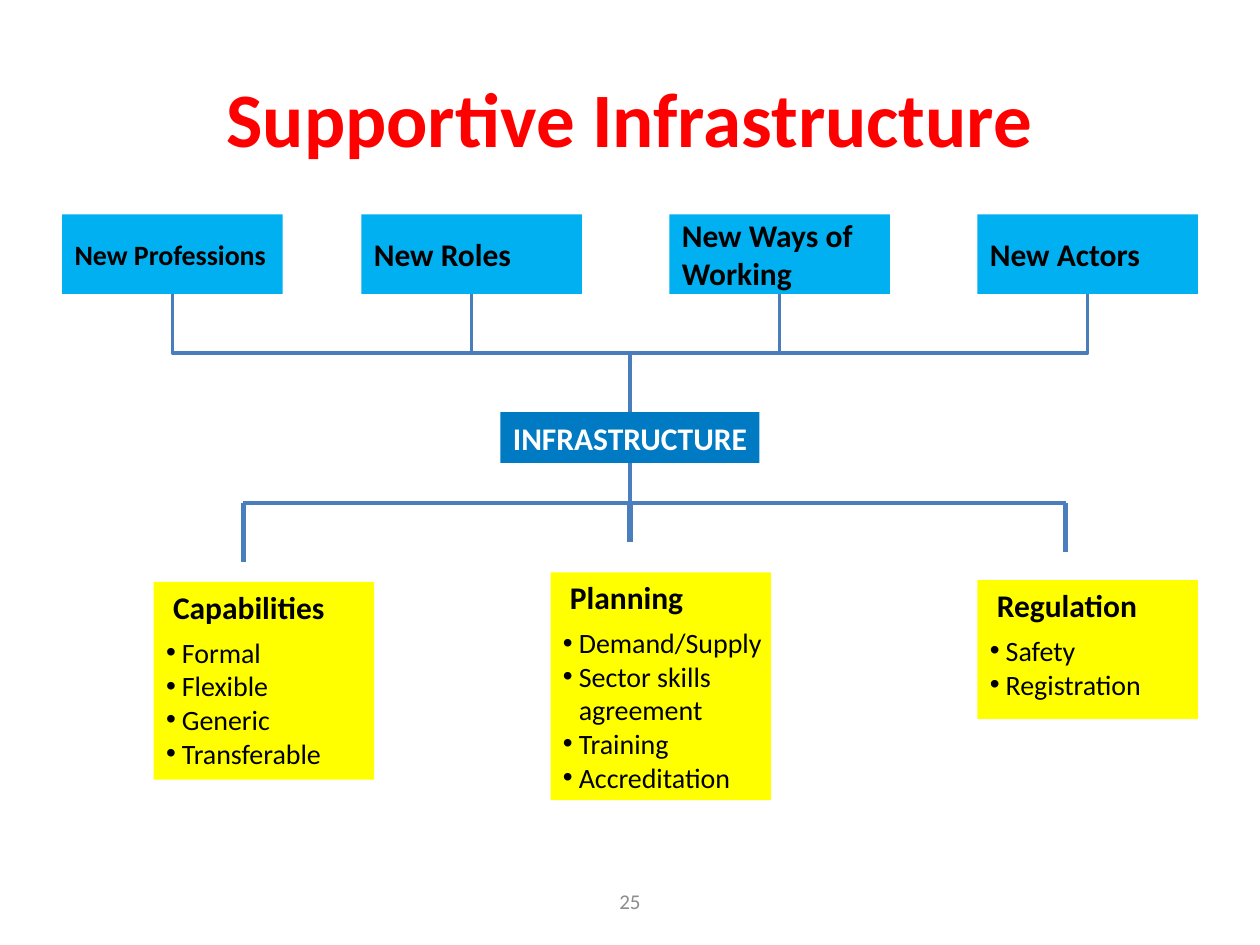
"""Builds the Supportive Infrastructure slide: four inputs, one hub, three outputs."""
from lxml.etree import SubElement
from pptx import Presentation
from pptx.dml.color import RGBColor
from pptx.enum.shapes import MSO_CONNECTOR as CONN, MSO_SHAPE as SHAPE
from pptx.enum.text import MSO_ANCHOR as ANCHOR, PP_ALIGN as ALIGN
from pptx.oxml.ns import qn
from pptx.util import Pt

TITLE = "Supportive Infrastructure"
HUB = "INFRASTRUCTURE"
PAGE = "25"
INPUTS = [
    (35.5, 16, ["New Professions"]),
    (206.5, 18, ["New Roles"]),
    (382.5, 18, ["New Ways of", "Working"]),
    (558.5, 18, ["New Actors"]),
]
OUTPUTS = [
    dict(head="Capabilities", box=(87.8, 332.5, 113), leg=(139, 321),
         items=["Formal", "Flexible", "Generic", "Transferable"]),
    dict(head="Planning", box=(314.6, 327, 130.3), leg=(360, 309.6),
         items=["Demand/Supply", "Sector skills\nagreement", "Training", "Accreditation"]),
    dict(head="Regulation", box=(558.5, 331.5, 79.3), leg=(609, 315.4),
         items=["Safety", "Registration"]),
]
FONT = "Calibri"
BLACK, WHITE, RED, GREY = "000000", "FFFFFF", "FF0000", "8C8C8C"
CYAN, BLUE, YELLOW = "00B0F0", "007AC2", "FFFF00"
ELBOW_LINE, TREE_LINE = "4A7EBB", "4B7EBC"
BOX_W, INPUT_Y, INPUT_H = 126, 122.5, 45.5
MID_X, HUB_Y, HUB_W, HUB_H = 360, 235.5, 148, 29
BAR_Y = 287.3
HEAD_INDENT, BULLET_INDENT = 4, 9.1

prs = Presentation()
prs.slide_width, prs.slide_height = Pt(720), Pt(540)
s = prs.slides.add_slide(prs.slide_layouts[5])


def rgb(color):
    return RGBColor.from_string(color)


def add_run(p, text, size, color, bold=False):
    for i, line in enumerate(text.split("\n")):
        if i:
            p.add_line_break()
        r = p.add_run()
        r.text = line
        r.font.name, r.font.size, r.font.bold = FONT, Pt(size), bold
        r.font.color.rgb = rgb(color)


def next_par(tf):
    p = tf.paragraphs[0] if not tf.paragraphs[0].runs else tf.add_paragraph()
    p.alignment = ALIGN.LEFT
    return p


def indent(p, left, first=0):
    pPr = p._p.get_or_add_pPr()
    pPr.set("marL", str(Pt(left)))
    pPr.set("indent", str(Pt(first)))
    return pPr


def add_box(x, y, w, h, fill, anchor=ANCHOR.MIDDLE):
    sp = s.shapes.add_shape(SHAPE.RECTANGLE, Pt(x), Pt(y), Pt(w), Pt(h))
    sp.shadow.inherit = False
    sp.fill.solid()
    sp.fill.fore_color.rgb = rgb(fill)
    sp.line.fill.background()
    tf = sp.text_frame
    tf.word_wrap, tf.vertical_anchor, tf.margin_right = True, anchor, 0
    return sp


def add_line(x1, y1, x2, y2, color, width, kind=CONN.STRAIGHT):
    cxn = s.shapes.add_connector(kind, Pt(x1), Pt(y1), Pt(x2), Pt(y2))
    cxn.line.color.rgb = rgb(color)
    cxn.line.width = Pt(width)
    SubElement(cxn._element.spPr, qn("a:effectLst"))
    return cxn


def add_elbow(x1, y1, x2, y2):
    """Draws a down-across-down elbow as a quarter-turned connector."""
    cx, cy = (x1 + x2) / 2, (y1 + y2) / 2
    side = 1 if x1 < x2 else -1
    dx, dy = side * (y2 - y1) / 2, abs(x2 - x1) / 2
    cxn = add_line(cx + dx, cy - dy, cx - dx, cy + dy, ELBOW_LINE, 2, CONN.ELBOW)
    xfrm = cxn._element.spPr.find(qn("a:xfrm"))
    xfrm.set("rot", str((270 if side > 0 else 90) * 60000))


title = s.shapes.title
title.left, title.top, title.width, title.height = Pt(36), Pt(21.6), Pt(648), Pt(90)
title.text_frame.vertical_anchor = ANCHOR.MIDDLE
p = title.text_frame.paragraphs[0]
p.alignment = ALIGN.CENTER
add_run(p, TITLE, 44, RED, True)

for x, size, lines in INPUTS:
    sp = add_box(x, INPUT_Y, BOX_W, INPUT_H, CYAN)
    for line in lines:
        add_run(next_par(sp.text_frame), line, size, BLACK, True)
    add_elbow(x + BOX_W / 2, INPUT_Y + INPUT_H, MID_X, HUB_Y)

hub = add_box(MID_X - HUB_W / 2, HUB_Y, HUB_W, HUB_H, BLUE)
add_run(next_par(hub.text_frame), HUB, 18, WHITE, True)

for out in OUTPUTS:
    x, y, h = out["box"]
    tf = add_box(x, y, BOX_W, h, YELLOW, ANCHOR.TOP).text_frame
    p = next_par(tf)
    indent(p, HEAD_INDENT)
    p.space_after = Pt(5.4)
    add_run(p, out["head"], 18, BLACK, True)
    for item in out["items"]:
        p = next_par(tf)
        pPr = indent(p, BULLET_INDENT, -BULLET_INDENT)
        SubElement(pPr, qn("a:buFont"), typeface="Arial")
        SubElement(pPr, qn("a:buChar"), char="•")
        add_run(p, item, 16, BLACK)

stem = add_line(MID_X, HUB_Y + HUB_H, MID_X, BAR_Y, TREE_LINE, 2.25)
stem.begin_connect(hub, 2)
legs = [out["leg"] for out in OUTPUTS]
add_line(legs[0][0], BAR_Y, legs[-1][0], BAR_Y, TREE_LINE, 2.25)
for x, end_y in legs:
    add_line(x, BAR_Y, x, end_y, TREE_LINE, 3)

tf = s.shapes.add_textbox(Pt(246), Pt(500.5), Pt(228), Pt(28.75)).text_frame
tf.word_wrap, tf.vertical_anchor = True, ANCHOR.MIDDLE
p = tf.paragraphs[0]
p.alignment = ALIGN.CENTER
add_run(p, PAGE, 12, GREY)

prs.save("out.pptx")
